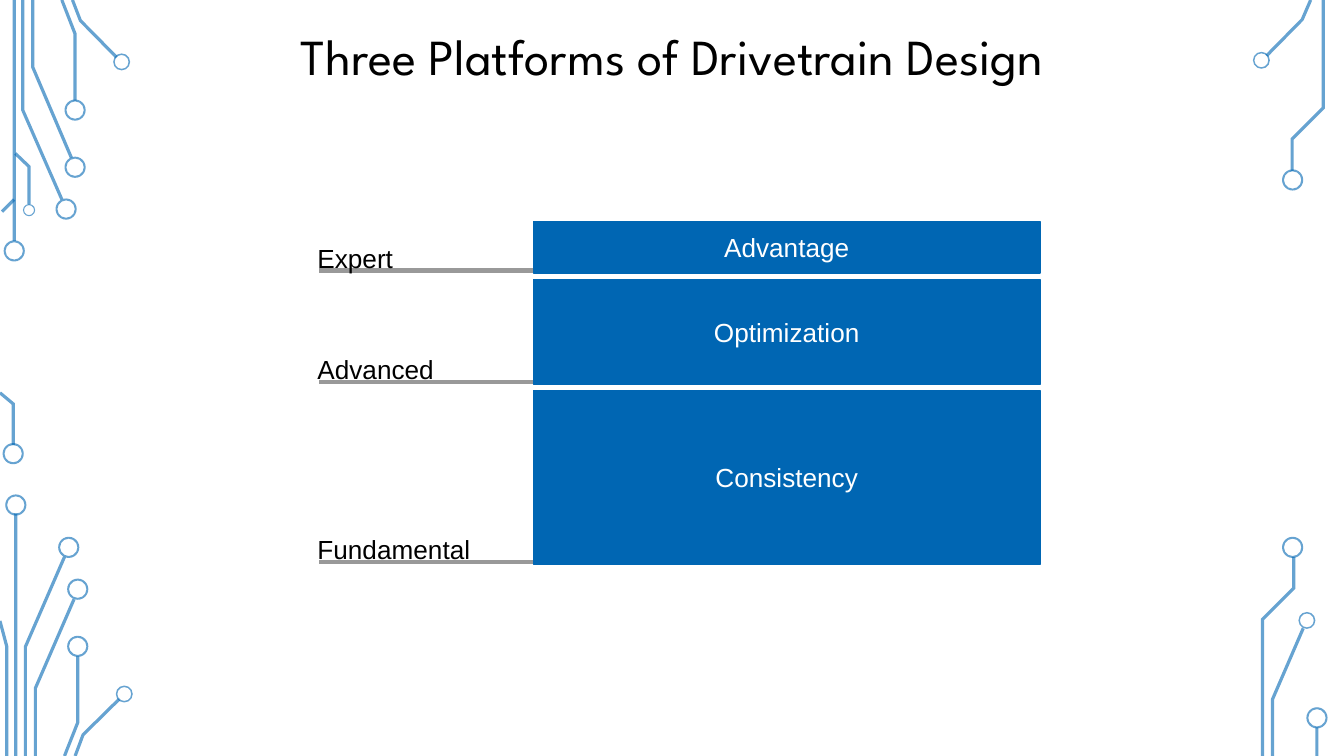
import math

import lxml.etree
import pptx
import pptx.dml.color
import pptx.enum.shapes
import pptx.enum.text
import pptx.oxml.ns
import pptx.util

Cm = pptx.util.Cm
Pt = pptx.util.Pt
SHAPES = pptx.enum.shapes.MSO_SHAPE
ALIGN = pptx.enum.text.PP_ALIGN
ANCHOR = pptx.enum.text.MSO_ANCHOR

BLUE, GREY, BLACK, WHITE = "0066B3", "999999", "000000", "FFFFFF"
TRACE_OPACITY = 60
TRACE_WIDTH = 0.06
BAR_GAP = 0.12

# Each corner: origin, traces as centre lines, rings as (centre x, centre y, diameter)
CORNERS = [
    # Top left
    ((0, 0), [
        [(0.27, 0), (0.27, 4.55)],
        [(0.43, 0), (0.43, 2.08), (1.17, 3.77)],
        [(0.62, 0), (0.62, 1.27), (1.35, 2.98)],
        [(1.17, 0), (1.42, 0.64), (1.42, 1.9)],
        [(1.37, 0), (1.52, 0.39), (2.2, 1.08)],
        [(0.04, 4), (0.27, 3.77)],
        [(0.29, 2.9), (0.55, 3.15), (0.55, 3.86)],
    ], [(0.27, 4.74, 0.4), (1.25, 3.95, 0.4), (1.42, 3.16, 0.4),
        (1.42, 2.08, 0.4), (2.3, 1.17, 0.32), (0.55, 3.97, 0.23)]),
    # Bottom left
    ((0, 7.4), [
        [(0, 0.02), (0.25, 0.23), (0.25, 1.01)],
        [(0.3, 2.3), (0.3, 6.88)],
        [(0.48, 6.88), (0.48, 4.82), (1.22, 3.12)],
        [(0.13, 6.88), (0.13, 4.82), (0, 4.33)],
        [(0.67, 6.88), (0.67, 5.6), (1.4, 3.92)],
        [(1.22, 6.88), (1.47, 6.25), (1.47, 5)],
        [(1.42, 6.88), (1.57, 6.48), (2.25, 5.81)],
    ], [(0.25, 1.17, 0.4), (0.3, 2.14, 0.4), (1.3, 2.94, 0.4),
        (1.47, 3.73, 0.4), (1.47, 4.81, 0.4), (2.35, 5.71, 0.32)]),
    # Top right
    ((23.6, 0), [
        [(1.17, 0), (1.01, 0.37), (0.34, 1.05)],
        [(1.41, 0), (1.41, 2.04), (0.82, 2.63), (0.82, 3.23)],
    ], [(0.24, 1.14, 0.32), (0.83, 3.4, 0.4)]),
    # Bottom right
    ((23.6, 10.1), [
        [(0.45, 4.18), (0.45, 3.11), (1.03, 1.77)],
        [(0.26, 4.18), (0.26, 1.6), (0.85, 1.01), (0.85, 0.42)],
        [(1.29, 3.64), (1.29, 4.18)],
    ], [(0.83, 0.24, 0.4), (1.1, 1.62, 0.32), (1.29, 3.46, 0.4)]),
]

# Platforms from top to bottom: level, name, bar height
PLATFORMS = [
    ("Expert", "Advantage", 0.97),
    ("Advanced", "Optimization", 1.98),
    ("Fundamental", "Consistency", 3.28),
]


def color(value):
    return pptx.dml.color.RGBColor.from_string(value)


def fill_trace(shape):
    """Give a circuit part its translucent fill, without outline."""
    shape.shadow.inherit = False
    shape.fill.solid()
    shape.fill.fore_color.rgb = color(BLUE)
    shape.line.fill.background()
    solid = shape._element.spPr.find(pptx.oxml.ns.qn("a:solidFill"))
    lxml.etree.SubElement(solid[0], pptx.oxml.ns.qn("a:alpha"),
                          val=str(TRACE_OPACITY * 1000))


def format_text(shape, text, font, size, text_color, align, anchor, margins):
    frame = shape.text_frame
    frame.text = text
    frame.word_wrap = True
    frame.auto_size = pptx.enum.text.MSO_AUTO_SIZE.NONE
    frame.vertical_anchor = anchor
    frame.margin_left = frame.margin_right = Cm(margins[0])
    frame.margin_top = frame.margin_bottom = Cm(margins[1])
    paragraph = frame.paragraphs[0]
    paragraph.alignment = align
    run = paragraph.runs[0]
    run.font.name = font
    run.font.size = Pt(size)
    run.font.color.rgb = color(text_color)
    return paragraph


def band_outline(points, width):
    """Return the closed outline of a band with mitred corners."""
    normals = []
    for (x1, y1), (x2, y2) in zip(points, points[1:]):
        length = math.hypot(x2 - x1, y2 - y1)
        normals.append(((y1 - y2) / length, (x2 - x1) / length))
    before, after = normals[:1] + normals, normals + normals[-1:]
    left, right = [], []
    for (x, y), (ax, ay), (bx, by) in zip(points, before, after):
        scale = width / 2 / (1 + ax * bx + ay * by)
        dx, dy = (ax + bx) * scale, (ay + by) * scale
        left.append((x + dx, y + dy))
        right.append((x - dx, y - dy))
    return left + right[::-1]


def add_circuit(slide, origin, traces, rings):
    left, top = origin
    shapes = slide.shapes.add_group_shape().shapes
    for points in traces:
        if len(points) == 2 and points[0][0] == points[1][0]:
            (x, y1), (_, y2) = points
            trace = shapes.add_shape(
                SHAPES.RECTANGLE, Cm(left + x - TRACE_WIDTH / 2), Cm(top + y1),
                Cm(TRACE_WIDTH), Cm(y2 - y1))
        else:
            outline = [(Cm(left + x), Cm(top + y))
                       for x, y in band_outline(points, TRACE_WIDTH)]
            builder = shapes.build_freeform(*outline[0])
            builder.add_line_segments(outline[1:], close=True)
            trace = builder.convert_to_shape()
        fill_trace(trace)
    for x, y, size in rings:
        ring = shapes.add_shape(SHAPES.DONUT, Cm(left + x - size / 2),
                                Cm(top + y - size / 2), Cm(size), Cm(size))
        ring.adjustments[0] = 0.09
        fill_trace(ring)


def add_title(slide, left, top, width, height):
    title = slide.shapes.title
    title.left, title.top = Cm(left), Cm(top)
    title.width, title.height = Cm(width), Cm(height)
    paragraph = format_text(title, "Three Platforms of Drivetrain Design",
                            "League Spartan", 27, BLACK, ALIGN.CENTER,
                            ANCHOR.MIDDLE, (0.18, 0.1))
    paragraph.line_spacing = 0.9


def add_platforms(slide, left, top, width):
    shapes = slide.shapes.add_group_shape().shapes
    bar_left = left + 4.33
    for level, name, height in PLATFORMS:
        line_y = top + height - 0.05

        # Level line, running behind the bar
        line = shapes.add_connector(
            pptx.enum.shapes.MSO_CONNECTOR.STRAIGHT,
            Cm(bar_left + 0.15), Cm(line_y), Cm(left + 0.27), Cm(line_y))
        line.line.color.rgb = color(GREY)
        line.line.width = Pt(2.25)
        lxml.etree.SubElement(line._element.spPr, pptx.oxml.ns.qn("a:effectLst"))

        # Level label
        label = shapes.add_textbox(Cm(left), Cm(line_y - 0.79), Cm(3.45), Cm(1.4))
        format_text(label, level, "Arial", 14, BLACK, ALIGN.LEFT,
                    ANCHOR.TOP, (0.25, 0.25))

        # Platform bar
        bar = shapes.add_shape(SHAPES.RECTANGLE, Cm(bar_left), Cm(top),
                               Cm(width - 4.33), Cm(height))
        bar.shadow.inherit = False
        bar.fill.solid()
        bar.fill.fore_color.rgb = color(BLUE)
        bar.line.color.rgb = color(BLUE)
        bar.line.width = Pt(0.75)
        format_text(bar, name, "Arial", 14, WHITE, ALIGN.CENTER,
                    ANCHOR.MIDDLE, (0.25, 0.25))
        top += height + BAR_GAP


def main():
    presentation = pptx.Presentation()
    presentation.slide_width, presentation.slide_height = Cm(25.4), Cm(14.28)
    slide = presentation.slides.add_slide(presentation.slide_layouts[5])
    slide.background.fill.solid()
    slide.background.fill.fore_color.rgb = color(WHITE)
    for origin, traces, rings in CORNERS:
        add_circuit(slide, origin, traces, rings)
    add_title(slide, 2.39, -0.41, 20.62, 3.07)
    add_platforms(slide, 5.75, 4.19, 13.91)
    presentation.save("out.pptx")


if __name__ == "__main__":
    main()
